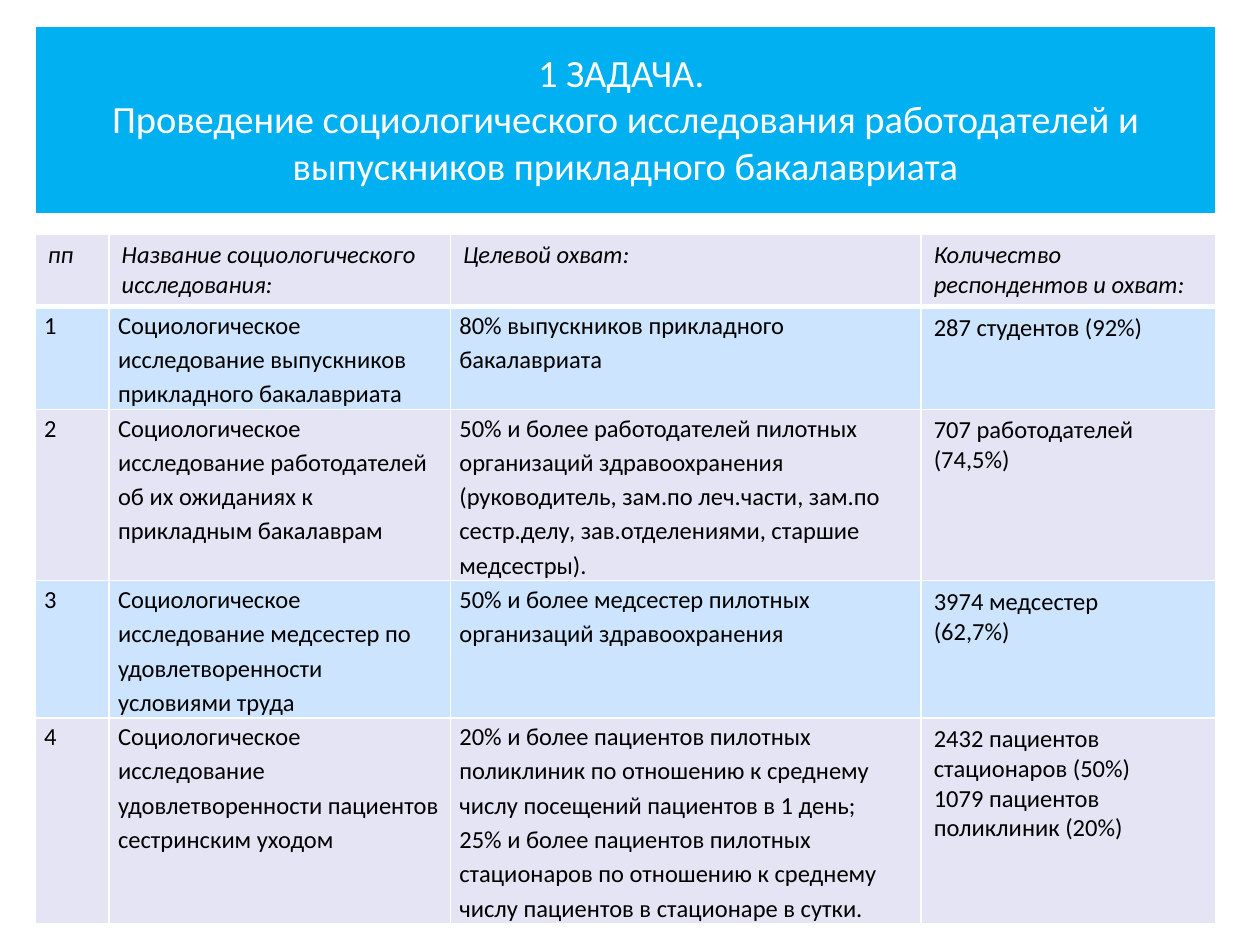
from dataclasses import dataclass

from lxml.etree import SubElement
from pptx import Presentation
from pptx.dml.color import RGBColor
from pptx.enum.text import MSO_ANCHOR, PP_ALIGN
from pptx.oxml.ns import qn
from pptx.slide import Slide
from pptx.table import Table, _Cell
from pptx.util import Cm, Pt


@dataclass(frozen=True)
class Style:
    fill: RGBColor
    color: RGBColor
    size: Pt
    italic: bool = False
    framed: bool = False
    tight: bool = False


@dataclass(frozen=True)
class Theme:
    font: str = "Calibri"
    head: Pt = Pt(22)
    body: Pt = Pt(14)
    ink: RGBColor = RGBColor(0, 0, 0)
    white: RGBColor = RGBColor(255, 255, 255)
    banner: RGBColor = RGBColor(0x00, 0xB0, 0xF0)
    lilac: RGBColor = RGBColor(0xE4, 0xE4, 0xF4)
    blue: RGBColor = RGBColor(0xCD, 0xE4, 0xFF)


@dataclass(frozen=True)
class Study:
    name: str
    target: str
    reach: str


THEME = Theme()
LEFT = 0.71
COLS = (1.49, 6.88, 9.49, 5.94)
ROW_H = 1.03
EDGES = {"a:lnL": 1, "a:lnR": 1, "a:lnT": 1, "a:lnB": 3}
HEAD = ("пп", "Название социологического исследования:",
        "Целевой охват:", "Количество респондентов и охват:")
TITLE = ("1 ЗАДАЧА. \nПроведение социологического исследования "
         "работодателей и выпускников прикладного бакалавриата")
STUDIES = (
    Study("Социологическое исследование выпускников прикладного бакалавриата",
          "80% выпускников прикладного бакалавриата",
          "287 студентов (92%)"),
    Study("Социологическое исследование работодателей об их ожиданиях "
          "к прикладным бакалаврам",
          "50% и более работодателей пилотных организаций здравоохранения "
          "(руководитель, зам.по леч.части, зам.по сестр.делу, "
          "зав.отделениями, старшие медсестры).",
          "707 работодателей (74,5%)"),
    Study("Социологическое исследование медсестер по удовлетворенности "
          "условиями труда",
          "50% и более медсестер пилотных организаций здравоохранения",
          "3974 медсестер\n(62,7%)"),
    Study("Социологическое исследование удовлетворенности пациентов "
          "сестринским уходом",
          "20% и более пациентов пилотных поликлиник по отношению "
          "к среднему числу посещений пациентов в 1 день;\n"
          "25% и более пациентов пилотных стационаров по отношению "
          "к среднему числу пациентов в стационаре в сутки.",
          "2432 пациентов стационаров (50%)\n"
          "1079 пациентов поликлиник (20%)"),
)


def add_edges(cell: _Cell) -> None:
    """Draw white borders, with the bottom one thicker."""
    props = cell._tc.get_or_add_tcPr()
    for pos, (tag, width) in enumerate(EDGES.items()):
        line = SubElement(props, qn(tag), w=str(Pt(width)))
        solid = SubElement(line, qn("a:solidFill"))
        SubElement(solid, qn("a:srgbClr"), val=str(THEME.white))
        props.insert(pos, line)


def fill_cell(cell: _Cell, text: str, style: Style) -> None:
    cell.text = text
    cell.fill.solid()
    cell.fill.fore_color.rgb = style.fill
    if style.framed:
        add_edges(cell)
    if style.tight:
        cell.margin_left = cell.margin_right = Cm(0.18)
        cell.margin_top = cell.margin_bottom = 0
    for par in cell.text_frame.paragraphs:
        if style.tight:
            par.line_spacing = 1.15
        font = par.font
        font.name, font.size = THEME.font, style.size
        font.bold, font.italic = False, style.italic
        font.color.rgb = style.color


def add_table(slide: Slide, top: float, height: float,
              cols: tuple[float, ...], rows: int, row_h: float) -> Table:
    """Add a table whose rows may grow from row_h to fit their text."""
    frame = slide.shapes.add_table(rows, len(cols), Cm(LEFT), Cm(top),
                                   Cm(sum(cols)), Cm(height))
    table = frame.table
    for col, width in zip(table.columns, cols):
        col.width = Cm(width)
    for row in table.rows:
        row.height = Cm(row_h)
    frame.height = Cm(height)
    return table


def add_grid(slide: Slide) -> None:
    grid = add_table(slide, 4.72, 13.72, COLS, len(STUDIES) + 1, ROW_H)
    head = Style(THEME.lilac, THEME.ink, THEME.body, italic=True, framed=True)
    for col, text in enumerate(HEAD):
        fill_cell(grid.cell(0, col), text, head)
    for num, study in enumerate(STUDIES, 1):
        fill = THEME.blue if num % 2 else THEME.lilac
        texts = (str(num), study.name, study.target, study.reach)
        for col, text in enumerate(texts):
            style = Style(fill, THEME.ink, THEME.body,
                          tight=col < len(COLS) - 1)
            fill_cell(grid.cell(num, col), text, style)


def add_banner(slide: Slide) -> None:
    cell = add_table(slide, 0.53, 3.81, (sum(COLS),), 1, 3.81).cell(0, 0)
    fill_cell(cell, TITLE,
              Style(THEME.banner, THEME.white, THEME.head, framed=True))
    cell.vertical_anchor = MSO_ANCHOR.MIDDLE
    for par in cell.text_frame.paragraphs:
        par.alignment = PP_ALIGN.CENTER


def main() -> None:
    deck = Presentation()
    deck.slide_width, deck.slide_height = Cm(25.4), Cm(19.05)
    slide = deck.slides.add_slide(deck.slide_layouts.get_by_name("Blank"))
    add_grid(slide)
    add_banner(slide)
    deck.save("out.pptx")


if __name__ == "__main__":
    main()
